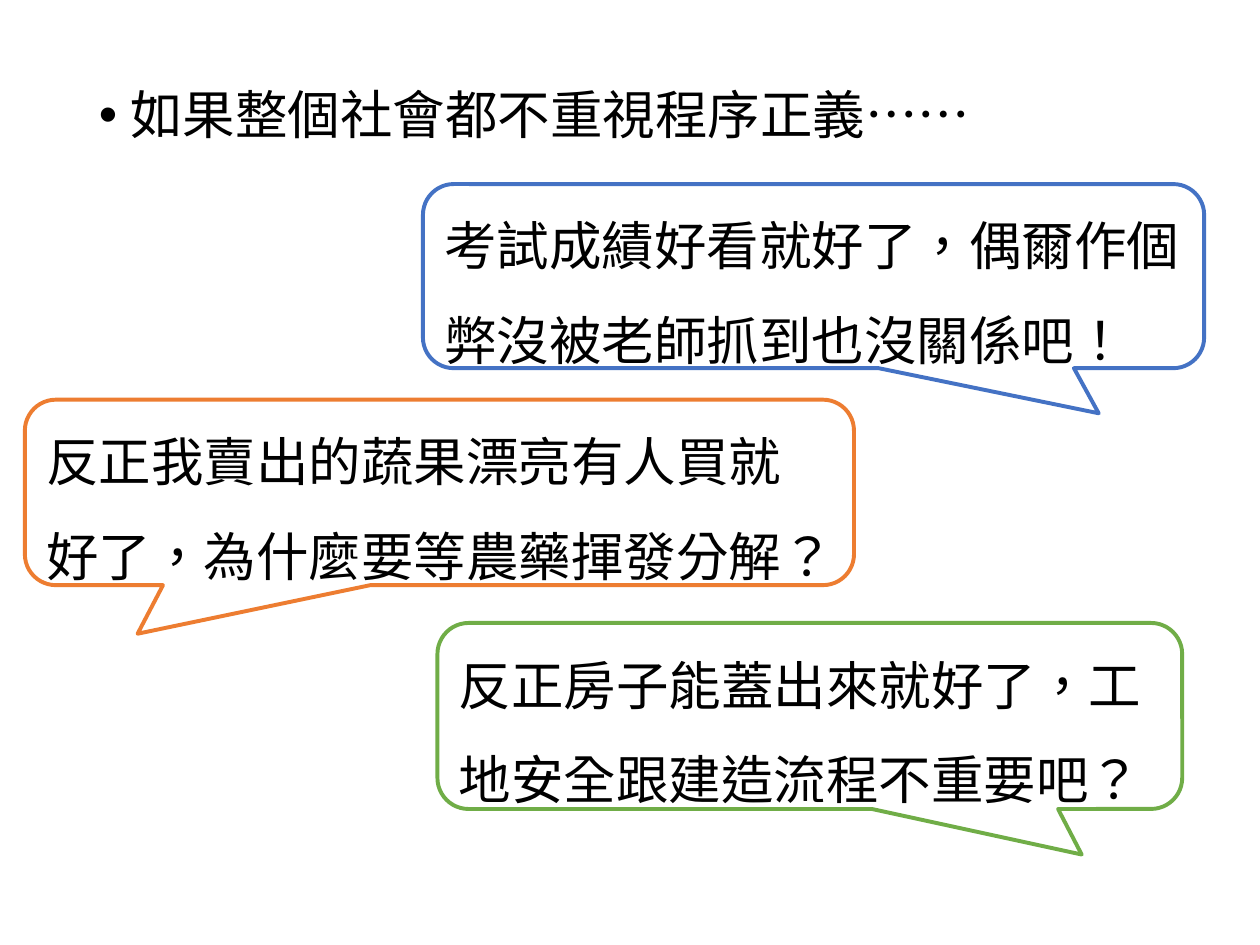
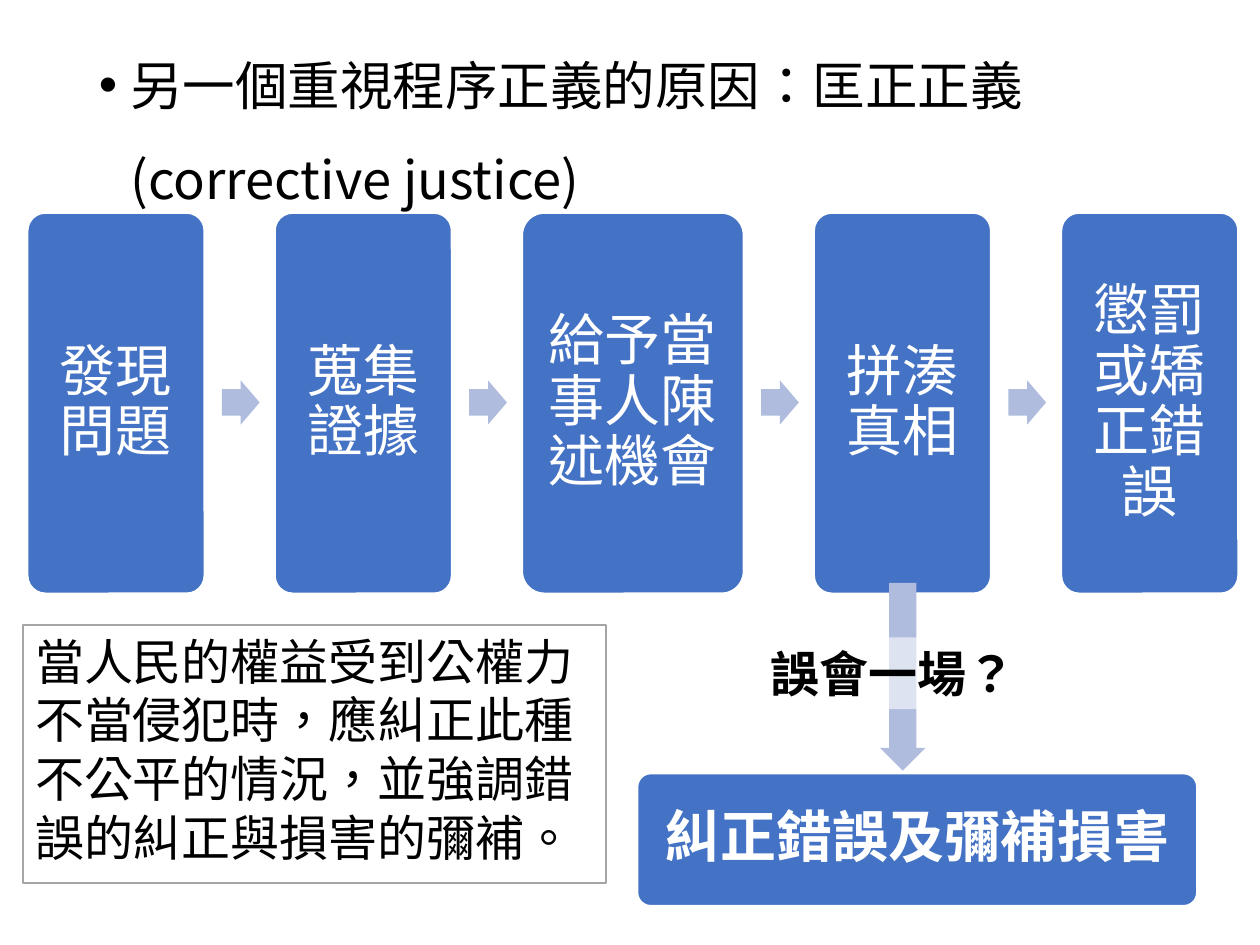
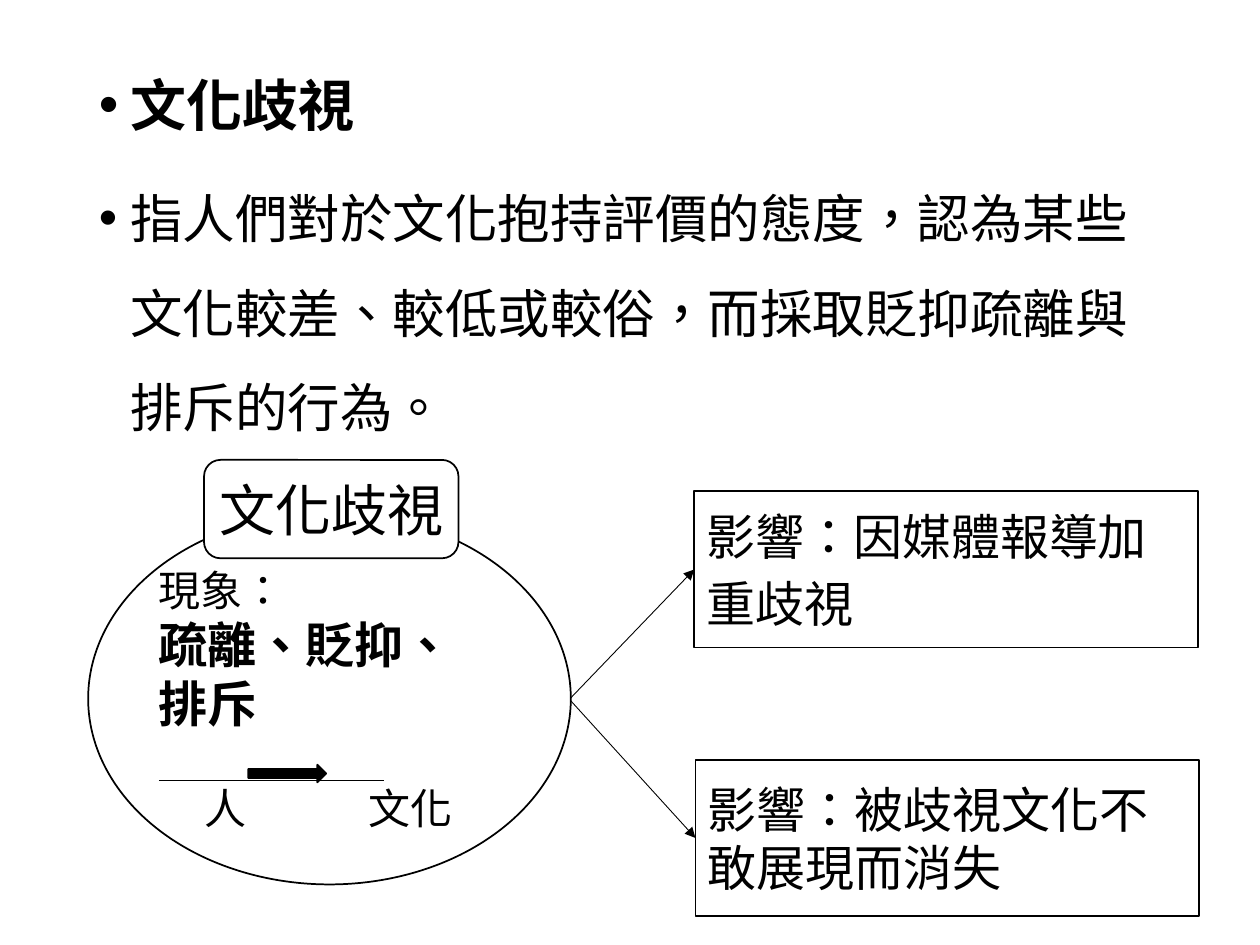
from lxml import etree
from pptx import Presentation
from pptx.dml.color import RGBColor
from pptx.enum.shapes import MSO_CONNECTOR, MSO_SHAPE
from pptx.enum.text import MSO_ANCHOR, PP_ALIGN
from pptx.oxml.ns import qn
from pptx.util import Pt

COLORS = {
    "ink": "000000",
    "paper": "FFFFFF",
    "blue": "4472C4",
    "orange": "ED7D31",
    "green": "70AD47",
    "pale_blue": "B0BCDE",
    "gray": "A5A5A5",
}
FONT = "Noto Sans CJK SC"


def rgb(name):
    return RGBColor.from_string(COLORS[name])


def add_child(parent, tag, **attributes):
    return etree.SubElement(parent, qn(tag), attributes)


def write(frame, text, size=30, color="ink", bold=False, font=FONT, align=PP_ALIGN.LEFT,
          spacing=1.0, before=0, bullet=False, tabs=()):
    """Fill the empty first paragraph of the frame, or append a paragraph."""
    first = not frame.paragraphs[0].runs
    paragraph = frame.paragraphs[0] if first else frame.add_paragraph()
    properties = paragraph._p.get_or_add_pPr()
    if bullet:
        properties.set("marL", str(Pt(18)))
        properties.set("indent", str(-Pt(18)))
        add_child(properties, "a:buFont", typeface="Arial")
        add_child(properties, "a:buChar", char="•")
    if tabs:
        tab_list = add_child(properties, "a:tabLst")
        for position in tabs:
            add_child(tab_list, "a:tab", pos=str(Pt(position)), algn="l")
    paragraph.alignment = align
    paragraph.line_spacing = spacing
    if before and not first:
        paragraph.space_before = Pt(before)
    for index, line in enumerate(text.split("\n")):
        if index:
            paragraph.add_line_break()
        run = paragraph.add_run()
        run.text = line
        run.font.size = Pt(size)
        run.font.bold = bold
        run.font.name = font
        run.font.color.rgb = rgb(color)
        character = run._r.get_or_add_rPr()
        character.set("lang", "zh-TW")
        character.find(qn("a:latin")).addnext(
            character.makeelement(qn("a:ea"), {"typeface": font}))


def add_body(slide, top, height):
    frame = slide.shapes.add_textbox(Pt(49.5), Pt(top), Pt(621), Pt(height)).text_frame
    frame.word_wrap = True
    return frame


def add_block(slide, kind, box, fill="paper", line=None, width=1, adjust=(),
              insets=(7.2, 3.6, 7.2, 3.6), anchor=MSO_ANCHOR.MIDDLE):
    """Draw a preset shape; box is left, top, width, height."""
    block = slide.shapes.add_shape(kind, *(Pt(length) for length in box))
    block.shadow.inherit = False
    block.fill.solid()
    block.fill.fore_color.rgb = rgb(fill)
    if line:
        block.line.color.rgb = rgb(line)
        block.line.width = Pt(width)
    else:
        block.line.fill.background()
    for index, value in enumerate(adjust):
        block.adjustments[index] = value
    frame = block.text_frame
    frame.word_wrap = True
    frame.vertical_anchor = anchor
    (frame.margin_left, frame.margin_top,
     frame.margin_right, frame.margin_bottom) = (Pt(inset) for inset in insets)
    return block


def add_callout(slide, text, box, line, tail):
    callout = add_block(slide, MSO_SHAPE.ROUNDED_RECTANGULAR_CALLOUT, box, line=line,
                        width=2.25, adjust=(*tail, 0.167))
    write(callout.text_frame, text, spacing=1.5)


def add_step(slide, text, box, inset, bold=False):
    step = add_block(slide, MSO_SHAPE.ROUNDED_RECTANGLE, box, "blue", "paper",
                     adjust=[0.1], insets=[inset] * 4)
    write(step.text_frame, text, size=32, color="paper", bold=bold,
          align=PP_ALIGN.CENTER, spacing=0.9)


def add_flow_arrow(slide, box):
    return add_block(slide, MSO_SHAPE.RIGHT_ARROW, box, "pale_blue", adjust=(0.6, 0.5))


def add_line(slide, start, end, width=0.5, arrow=False):
    line = slide.shapes.add_connector(MSO_CONNECTOR.STRAIGHT,
                                      *(Pt(value) for value in (*start, *end)))
    line.line.color.rgb = rgb("ink")
    line.line.width = Pt(width)
    if arrow:
        add_child(line.line._get_or_add_ln(), "a:tailEnd", type="triangle")
    add_child(line._element.spPr, "a:effectLst")


def build_excuses(slide):
    write(add_body(slide, 47.5, 439), "如果整個社會都不重視程序正義……",
          spacing=0.9, bullet=True)
    tail_right, tail_left = (0.365, 0.745), (-0.364, 0.762)
    add_callout(slide, "考試成績好看就好了，偶爾作個弊沒被老師抓到也沒關係吧！",
                (241.7, 105.2, 446.4, 105.2), "blue", tail_right)
    add_callout(slide, "反正我賣出的蔬果漂亮有人買就好了，為什麼要等農藥揮發分解？",
                (14.2, 228.4, 473.8, 106), "orange", tail_left)
    add_callout(slide, "反正房子能蓋出來就好了，工地安全跟建造流程不重要吧？",
                (250, 356, 425.6, 106.3), "green", tail_right)


def build_correction(slide):
    write(add_body(slide, 8.6, 474),
          "另一個重視程序正義的原因：匡正正義(corrective justice)", spacing=1.5, bullet=True)

    steps = (("發現\n問題", 101), ("蒐集\n證據", 101), ("給予當事人陳述機會", 126.5),
             ("拼湊\n真相", 101), ("懲罰或矯正錯誤", 101))
    left, gap = 15.8, 40.3
    for number, (step, width) in enumerate(steps):
        if number:
            add_flow_arrow(slide, (left - gap + 10, 217.4, 21.6, 25.2))
        add_step(slide, step, (left, 121.7, width, 217.4), inset=9.4)
        left += width + gap

    add_step(slide, "糾正錯誤及彌補損害", (364.3, 442, 319.7, 75.6), inset=7.2, bold=True)
    add_flow_arrow(slide, (462.2, 373.7, 107.3, 25.9)).rotation = 90

    question = add_block(slide, MSO_SHAPE.RECTANGLE, (433.4, 364.3, 156.2, 41),
                         anchor=MSO_ANCHOR.TOP)
    paper = question._element.spPr.find(qn("a:solidFill"))[0]
    add_child(paper, "a:alpha", val="59000")
    write(question.text_frame, "誤會一場？", size=28, bold=True)

    definition = add_block(slide, MSO_SHAPE.RECTANGLE, (13, 357.1, 333.4, 147.6),
                           line="gray", anchor=MSO_ANCHOR.TOP)
    write(definition.text_frame,
          "當人民的權益受到公權力不當侵犯時，應糾正此種不公平的情況，並強調錯誤的糾正與損害的彌補。",
          size=28)


def build_discrimination(slide):
    body = add_body(slide, 17.3, 458.6)
    write(body, "文化歧視", size=32, bold=True, spacing=1.5, bullet=True)
    write(body, "指人們對於文化抱持評價的態度，認為某些文化較差、較低或較俗，而採取貶抑疏離與排斥的行為。",
          spacing=1.5, before=10, bullet=True)

    effects = (("影響：因媒體報導加重歧視", 396.7, 280.8, 1.14, 8),
               ("影響：被歧視文化不敢展現而消失", 397.4, 434.2, 1.0, 3.6))
    width, height = 288, 89.3
    for _, left, top, _, _ in effects:
        add_line(slide, (325.4, 399.6), (left, top + height / 2), arrow=True)
    for effect, left, top, spacing, bottom in effects:
        box = add_block(slide, MSO_SHAPE.RECTANGLE, (left, top, width, height),
                        line="ink", insets=(7.2, 3.6, 7.2, bottom))
        write(box.text_frame, effect, size=28, spacing=spacing)

    phenomenon = add_block(slide, MSO_SHAPE.OVAL, (50.4, 293, 275.8, 212.4),
                           line="ink", insets=[0] * 4).text_frame
    write(phenomenon, "現象：", size=24)
    write(phenomenon, "疏離、貶抑、排斥", size=28, bold=True)
    write(phenomenon, "\t人\t文化", size=24, before=28.6, tabs=(26, 120))

    label = add_block(slide, MSO_SHAPE.ROUNDED_RECTANGLE, (116.6, 262.8, 145.4, 56.2),
                      line="ink", insets=[0] * 4)
    write(label.text_frame, "文化歧視", size=32, font="Calibri", align=PP_ALIGN.CENTER)
    add_line(slide, (90.8, 446), (219.4, 446), width=1)
    add_block(slide, MSO_SHAPE.RIGHT_ARROW, (141.8, 437, 44.6, 10.1), "ink", "ink")


def main():
    deck = Presentation()
    deck.slide_width, deck.slide_height = Pt(720), Pt(540)
    for build in (build_excuses, build_correction, build_discrimination):
        build(deck.slides.add_slide(deck.slide_layouts[6]))
    deck.save("out.pptx")


if __name__ == "__main__":
    main()
